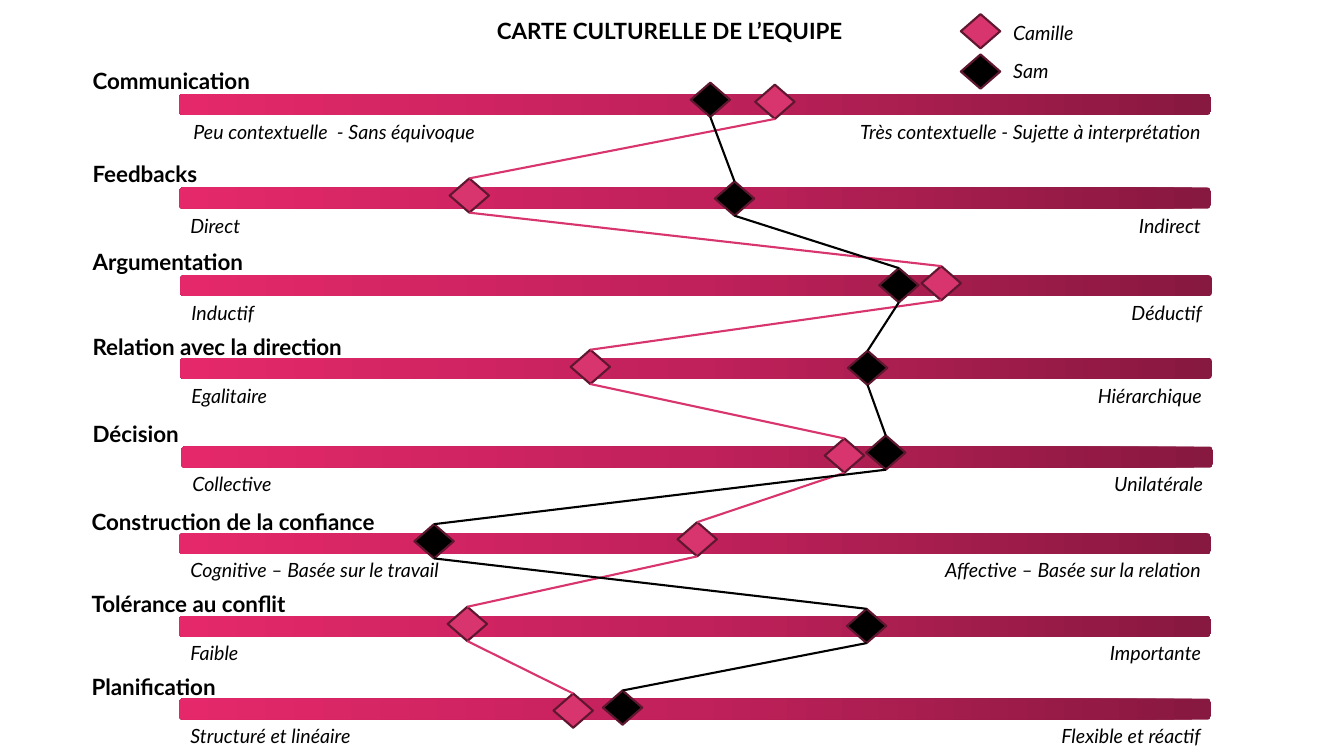
from copy import deepcopy
from itertools import pairwise

from lxml.etree import SubElement
from pptx import Presentation
from pptx.dml.color import RGBColor
from pptx.enum.shapes import MSO_CONNECTOR, MSO_SHAPE
from pptx.enum.text import MSO_AUTO_SIZE, PP_ALIGN
from pptx.oxml.ns import qn
from pptx.util import Inches, Pt

BLACK = RGBColor(0x00, 0x00, 0x00)
PINK = RGBColor(0xD8, 0x34, 0x6E)
EDGE = RGBColor(0x5F, 0x17, 0x30)
FADE = [
    (0, RGBColor(0x87, 0x18, 0x3F)),
    (0.5, RGBColor(0xC0, 0x21, 0x5A)),
    (1, RGBColor(0xE4, 0x28, 0x6A)),
]

# Fine grid: 1333 columns by 750 rows
CELL = Inches(0.01)
BAR_W, BAR_H = 1023, 21
GEM_W, GEM_H = 39, 34

deck = Presentation()
deck.slide_width = 1333 * CELL
deck.slide_height = 750 * CELL
slide = deck.slides.add_slide(deck.slide_layouts[6])
shapes = slide.shapes


def add_text(words, left, top, width, head=False, align=PP_ALIGN.LEFT):
    high = 37 if head else 34
    box = shapes.add_textbox(left * CELL, top * CELL, width * CELL, high * CELL)
    frame = box.text_frame
    frame.word_wrap = True
    frame.auto_size = MSO_AUTO_SIZE.SHAPE_TO_FIT_TEXT
    para = frame.paragraphs[0]
    para.alignment = align
    run = para.add_run()
    run.text = words
    font = run.font
    font.name = "Lato"
    font.size = Pt(16 if head else 14)
    font.bold = head
    font.italic = not head
    font.color.rgb = BLACK


def add_gem(left, top, color):
    gem = shapes.add_shape(
        MSO_SHAPE.DIAMOND, left * CELL, top * CELL, GEM_W * CELL, GEM_H * CELL)
    gem.shadow.inherit = False
    gem.fill.solid()
    gem.fill.fore_color.rgb = color
    gem.line.color.rgb = EDGE
    gem.line.width = Pt(1.5)
    return gem


# Scales: title, its top and width, bar left and top,
# then the words and box width at each end
scales = [
    ("Communication", 62, 301, 178, 93,
     "Peu contextuelle  - Sans équivoque", 347,
     "Très contextuelle - Sujette à interprétation", 413),
    ("Feedbacks", 154, 301, 178, 186, "Direct", 220, "Indirect", 301),
    ("Argumentation", 241, 301, 179, 273, "Inductif", 220, "Déductif", 301),
    ("Relation avec la direction", 326, 351, 179, 355,
     "Egalitaire", 220, "Hiérarchique", 301),
    ("Décision", 412, 351, 180, 443, "Collective", 220, "Unilatérale", 301),
    ("Construction de la confiance", 499, 435, 178, 529,
     "Cognitive – Basée sur le travail", 304,
     "Affective – Basée sur la relation", 329),
    ("Tolérance au conflit", 581, 435, 178, 611,
     "Faible", 220, "Importante", 301),
    ("Planification", 663, 435, 178, 693,
     "Structuré et linéaire", 220, "Flexible et réactif", 301),
]
for row, (name, top, wide, left, bar_y, low, low_w, high, high_w) in enumerate(scales):
    bar = shapes.add_shape(
        MSO_SHAPE.ROUNDED_RECTANGLE,
        left * CELL, bar_y * CELL, BAR_W * CELL, BAR_H * CELL)
    bar.shadow.inherit = False
    bar.line.fill.background()
    bar.fill.gradient()
    bar.fill.gradient_angle = 180
    stops = bar._element.spPr.find(".//" + qn("a:gsLst"))
    stops.append(deepcopy(stops[0]))
    for stop, (place, color) in zip(bar.fill.gradient_stops, FADE):
        stop.position = place
        stop.color.rgb = color

    add_text(name, 82 if row < 5 else 81, top, wide, head=True)
    under = bar_y + (21 if row < 4 else 20)
    add_text(low, left + (1 if row else 4), under, low_w)
    add_text(high, left + BAR_W - high_w, under, high_w, align=PP_ALIGN.RIGHT)

# Title
add_text("CARTE CULTURELLE DE L’EQUIPE", 483, 12, 386, head=True)

# Profiles: one gem per scale, joined bottom to top, then the legend
people = [
    ("Camille", PINK, 14, 16,
     [(749, 84), (446, 177), (914, 264), (566, 347),
      (818, 435), (672, 518), (444, 602), (549, 688)]),
    ("Sam", BLACK, 54, 54,
     [(685, 82), (709, 180), (872, 266), (841, 348),
      (859, 432), (411, 520), (840, 604), (598, 685)]),
]
for name, color, key_y, text_y, spots in people:
    gems = [add_gem(left, top, color) for left, top in spots]
    for upper, lower in pairwise(gems):
        link = shapes.add_connector(MSO_CONNECTOR.STRAIGHT, 0, 0, 0, 0)
        link.begin_connect(upper, 2)
        link.end_connect(lower, 0)
        link.line.color.rgb = color
        link.line.width = Pt(1.5)
        SubElement(link._element.spPr, qn("a:effectLst"))
    add_gem(953, key_y, color)
    add_text(name, 995, text_y, 140)

deck.save("out.pptx")
